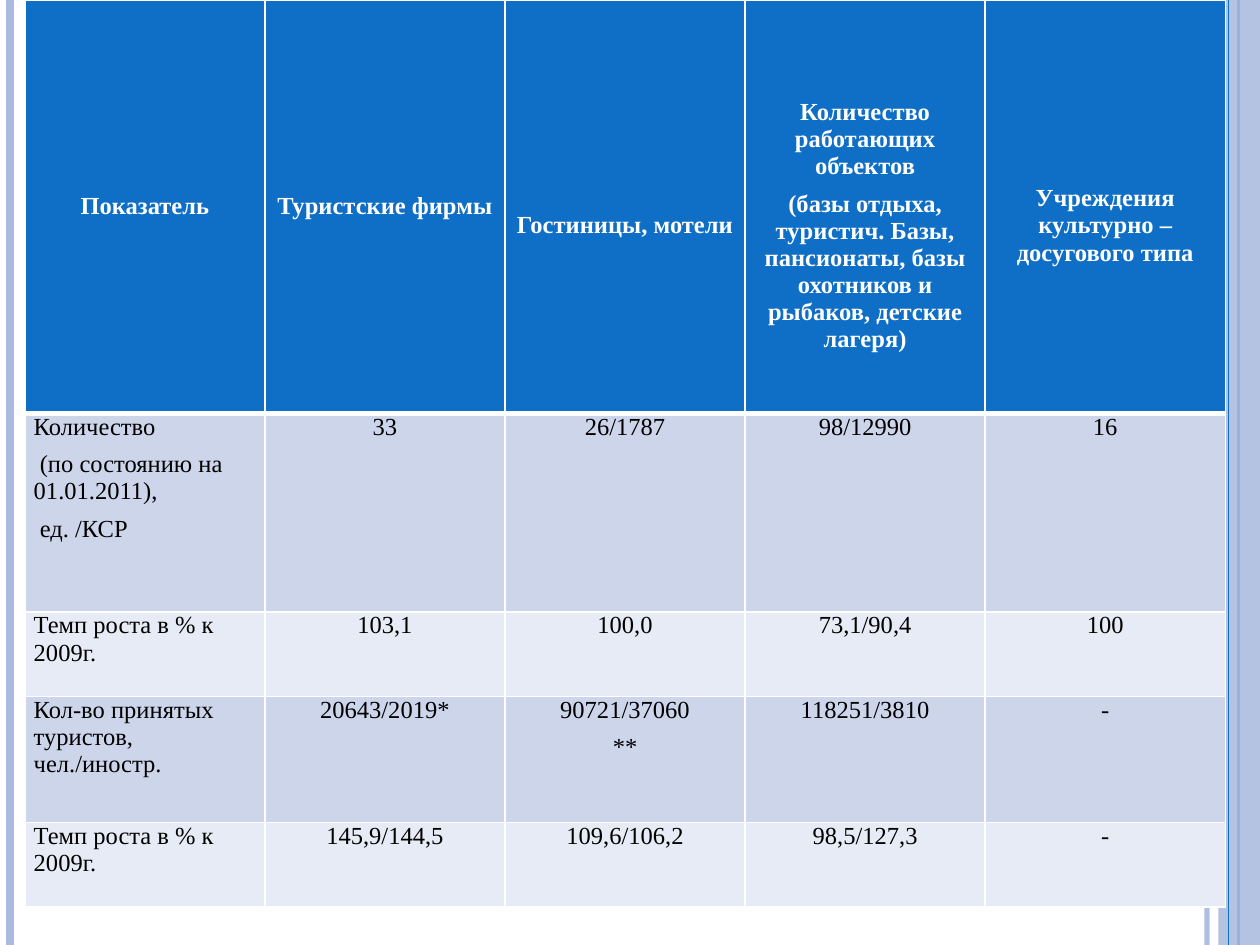
"""Build a slide with a table of tourism indicators between decorative side stripes."""
from lxml.etree import SubElement
from pptx import Presentation
from pptx.dml.color import RGBColor
from pptx.enum.shapes import MSO_CONNECTOR, MSO_SHAPE
from pptx.enum.text import MSO_ANCHOR as Anchor, PP_ALIGN as Align
from pptx.oxml.ns import qn
from pptx.util import Cm, Pt

HEADERS = [
    ["Показатель"],
    ["Туристские фирмы"],
    ["Гостиницы, мотели"],
    ["Количество работающих объектов",
     "(базы отдыха, туристич. Базы, пансионаты, базы охотников и рыбаков, детские лагеря)"],
    ["Учреждения культурно – досугового типа"],
]
INDICATORS = [
    [["Количество", " (по состоянию на 01.01.2011),", " ед. /КСР"],
     ["33"], ["26/1787"], ["98/12990"], ["16"]],
    [["Темп роста в % к 2009г."], ["103,1"], ["100,0"], ["73,1/90,4"], ["100"]],
    [["Кол-во принятых туристов, чел./иностр."],
     ["20643/2019*"], ["90721/37060", "**"], ["118251/3810"], ["-"]],
    [["Темп роста в % к 2009г."], ["145,9/144,5"], ["109,6/106,2"], ["98,5/127,3"], ["-"]],
]
ROWS = [HEADERS] + INDICATORS
ROW_HEIGHTS = [8.33, 4.01, 1.7, 2.54, 1.7]
COLUMN_WIDTH = 4.84
HEADER_DROPS = [0, 0, 0.77, 0.77, 0.77]

BLUE, PALE_BLUE, WHITE, BLACK = "0F6FC6", "ABBBDF", "FFFFFF", "000000"
BANDS = ["CCD5EA", "E7EBF5"]
STRIPES_BEHIND = [(24.33, PALE_BLUE, 3, 93), (0.2, PALE_BLUE, 4.5, 100), (24.97, BLUE, 1.5, 100)]
STRIPES_FRONT = [(24.77, BLUE, 0.75, 100)]
WIDTH, HEIGHT = 25.4, 19.05


def paint(fill, color, opacity=100):
    fill.solid()
    fill.fore_color.rgb = RGBColor.from_string(color)
    if opacity < 100:
        tint = fill._xPr.find(qn("a:solidFill"))[0]
        SubElement(tint, qn("a:alpha"), val=str(opacity * 1000))


def add_stripe(slide, x, color, weight, opacity):
    stripe = slide.shapes.add_connector(MSO_CONNECTOR.STRAIGHT, Cm(x), 0, Cm(x), Cm(HEIGHT))
    stripe.line.width = Pt(weight)
    paint(stripe.line.fill, color, opacity)
    SubElement(stripe._element.spPr, qn("a:effectLst"))


def add_borders(cell, bottom, top):
    weights = {"a:lnL": 1, "a:lnR": 1, "a:lnT": top, "a:lnB": bottom}
    for tag, weight in weights.items():
        border = SubElement(cell._tc.get_or_add_tcPr(), qn(tag), w=str(Pt(weight)))
        solid = SubElement(border, qn("a:solidFill"))
        SubElement(solid, qn("a:srgbClr"), val=WHITE)


def fill_cell(cell, lines, row, column):
    is_header = row == 0
    add_borders(cell, bottom=3 if is_header else 1, top=3 if row == 1 else 1)
    paint(cell.fill, BLUE if is_header else BANDS[(row - 1) % 2])
    cell.margin_left = cell.margin_right = Cm(0.18)
    cell.margin_top = Cm(HEADER_DROPS[column] if is_header else 0)
    cell.margin_bottom = 0
    cell.vertical_anchor = Anchor.MIDDLE if is_header else Anchor.TOP
    cell.text = "\n".join(lines)
    for paragraph in cell.text_frame.paragraphs:
        paragraph.alignment = Align.CENTER if is_header or column else Align.LEFT
        paragraph.space_after = Pt(6)
        font = paragraph.font
        font.name, font.size, font.bold = "Times New Roman", Pt(14), is_header
        paint(font.fill, WHITE if is_header else BLACK)


def add_indicator_table(slide):
    frame = slide.shapes.add_table(
        len(ROWS), len(HEADERS), Cm(0.5), 0,
        Cm(COLUMN_WIDTH * len(HEADERS)), Cm(sum(ROW_HEIGHTS)))
    table = frame.table
    for column in table.columns:
        column.width = Cm(COLUMN_WIDTH)
    for row, (height, entries) in enumerate(zip(ROW_HEIGHTS, ROWS)):
        table.rows[row].height = Cm(height)
        for column, lines in enumerate(entries):
            fill_cell(table.cell(row, column), lines, row, column)


def main():
    deck = Presentation()
    deck.slide_width, deck.slide_height = Cm(WIDTH), Cm(HEIGHT)
    slide = deck.slides.add_slide(deck.slide_layouts[6])
    paint(slide.background.fill, WHITE)
    for stripe in STRIPES_BEHIND:
        add_stripe(slide, *stripe)
    side_band = slide.shapes.add_shape(
        MSO_SHAPE.RECTANGLE, Cm(24.56), 0, Cm(WIDTH - 24.56), Cm(HEIGHT))
    side_band.shadow.inherit = False
    side_band.line.fill.background()
    paint(side_band.fill, PALE_BLUE, 87)
    for stripe in STRIPES_FRONT:
        add_stripe(slide, *stripe)
    add_indicator_table(slide)
    deck.save("out.pptx")


if __name__ == "__main__":
    main()
